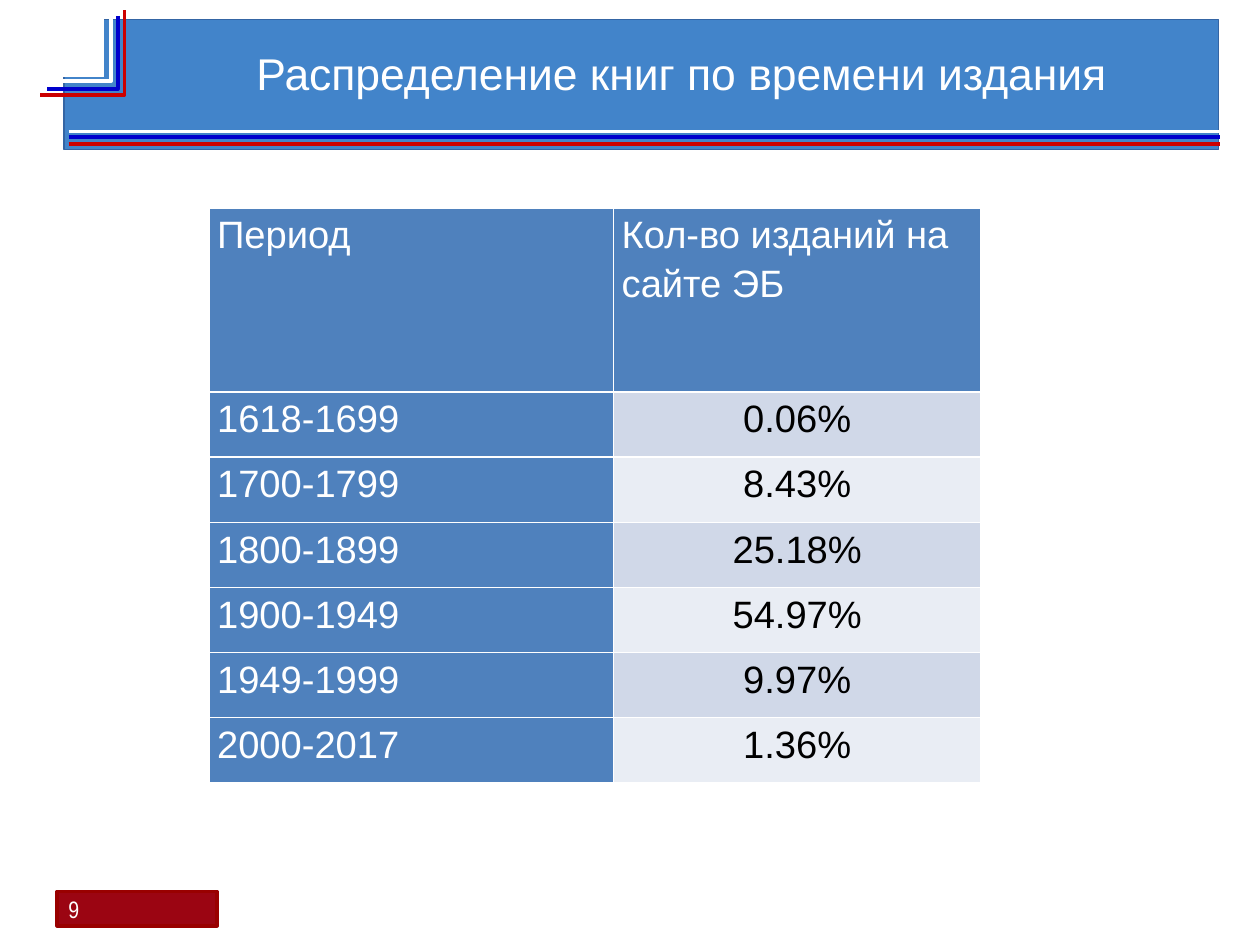
from typing import NamedTuple

from lxml.etree import SubElement
from pptx import Presentation
from pptx.dml.color import RGBColor
from pptx.enum.shapes import MSO_CONNECTOR as Connector, MSO_SHAPE as Shape
from pptx.enum.text import MSO_ANCHOR as Anchor, PP_ALIGN as Align
from pptx.oxml.ns import qn
from pptx.util import Cm, Inches, Pt

WHITE, BLACK = "FFFFFF", "000000"
BLUE, RED = "0000CC", "CC0000"
HEADER_FILL = "4F81BD"
BAND_FILLS = ("D0D8E8", "E9EDF4")
STRIPE_WIDTH = 2.3


class Panel(NamedTuple):
    left: float
    top: float
    width: float
    height: float
    fill: str
    line: str
    line_width: float


class Stripe(NamedTuple):
    y: float
    color: str


class Corner(NamedTuple):
    left: float
    top: float
    right: float
    bottom: float
    color: str


NUMBER_PANEL = Panel(0.5, 7.8, 1.4, 0.3, "9B0512", "990000", STRIPE_WIDTH)
HEADER_PANEL = Panel(0.56, 0.17, 10.1, 1.14, "4284CA", "3465A4", 0.75)
CORNER_PANEL = Panel(0.18, 0.06, 0.73, 0.61, WHITE, WHITE, 0.75)
STRIPES = [Stripe(1.15, WHITE), Stripe(1.2, BLUE), Stripe(1.26, RED)]
INNER_CORNER = Corner(0.35, 0.07, 0.97, 0.71, WHITE)
OUTER_CORNERS = [
    Corner(0.35, 0.09, 1.09, 0.83, RED),
    Corner(0.41, 0.14, 1.03, 0.78, BLUE),
]
COLUMN_WIDTHS = (3.54, 3.21)
HEADER_HEIGHT, ROW_HEIGHT = 1.61, 0.57
PERIODS = [
    ("Период", "Кол-во изданий на сайте ЭБ"),
    ("1618-1699", "0.06%"),
    ("1700-1799", "8.43%"),
    ("1800-1899", "25.18%"),
    ("1900-1949", "54.97%"),
    ("1949-1999", "9.97%"),
    ("2000-2017", "1.36%"),
]


def rgb(color: str) -> RGBColor:
    return RGBColor.from_string(color)


def set_line(shape, color: str, width: float) -> None:
    shape.line.color.rgb = rgb(color)
    shape.line.width = Pt(width)


def write(frame, text: str, *, size: float, font: str = "Arial", color: str = WHITE,
          align: Align = Align.LEFT, spacing: float = 1.0) -> None:
    frame.word_wrap = True
    paragraph = frame.paragraphs[0]
    paragraph.alignment = align
    paragraph.line_spacing = spacing
    run = paragraph.add_run()
    run.text = text
    run.font.name = font
    run.font.size = Pt(size)
    run.font.bold = False
    run.font.color.rgb = rgb(color)


def add_panel(slide, panel: Panel) -> None:
    box = (Inches(value) for value in panel[:4])
    shape = slide.shapes.add_shape(Shape.RECTANGLE, *box)
    shape.shadow.inherit = False
    shape.fill.solid()
    shape.fill.fore_color.rgb = rgb(panel.fill)
    set_line(shape, panel.line, panel.line_width)


def add_stripe(slide, stripe: Stripe) -> None:
    y = Inches(stripe.y)
    line = slide.shapes.add_connector(Connector.STRAIGHT, Inches(0.6), y, Inches(10.67), y)
    set_line(line, stripe.color, STRIPE_WIDTH)
    SubElement(line._element.spPr, qn("a:effectLst"))


def add_corner(slide, corner: Corner) -> None:
    left, top, right, bottom = (Inches(value) for value in corner[:4])
    builder = slide.shapes.build_freeform(right, top)
    builder.add_line_segments([(right, bottom), (left, bottom)], close=False)
    shape = builder.convert_to_shape()
    shape.shadow.inherit = False
    shape.fill.background()
    set_line(shape, corner.color, STRIPE_WIDTH)


def add_cell_borders(cell, color: str, width: float) -> None:
    properties = cell._tc.get_or_add_tcPr()
    for side in ("lnL", "lnR", "lnT", "lnB"):
        border = SubElement(properties, qn(f"a:{side}"), w=str(Pt(width)))
        fill = SubElement(border, qn("a:solidFill"))
        SubElement(fill, qn("a:srgbClr"), val=color)


def add_period_table(slide) -> None:
    heights = [HEADER_HEIGHT] + [ROW_HEIGHT] * (len(PERIODS) - 1)
    table = slide.shapes.add_table(
        len(PERIODS), len(COLUMN_WIDTHS), Inches(1.83), Inches(1.82),
        Inches(sum(COLUMN_WIDTHS)), Inches(sum(heights))).table
    table.horz_banding = False
    for column, width in zip(table.columns, COLUMN_WIDTHS):
        column.width = Inches(width)
    for row, height in zip(table.rows, heights):
        row.height = Inches(height)
    for r, texts in enumerate(PERIODS):
        for c, text in enumerate(texts):
            is_share = r > 0 and c > 0
            cell = table.cell(r, c)
            add_cell_borders(cell, WHITE, 1)
            cell.fill.solid()
            cell.fill.fore_color.rgb = rgb(BAND_FILLS[(r - 1) % 2] if is_share else HEADER_FILL)
            cell.margin_left = cell.margin_right = Inches(0.07)
            cell.margin_top = cell.margin_bottom = 0
            write(cell.text_frame, text, size=24, spacing=1.15,
                  color=BLACK if is_share else WHITE,
                  align=Align.CENTER if is_share else Align.LEFT)


def add_page_number(slide) -> None:
    number = slide.shapes.add_textbox(Inches(0.5), Inches(7.78), Inches(1.34), Inches(0.34))
    number.text_frame.vertical_anchor = Anchor.MIDDLE
    write(number.text_frame, "9", size=15, font="Arial Narrow")


def place_title(slide) -> None:
    """Format the title and bring it in front of the header panel."""
    title = slide.shapes.title
    title.left, title.top = Inches(1.57), Inches(0.35)
    title.width, title.height = Inches(8.78), Inches(0.57)
    title.text_frame.vertical_anchor = Anchor.TOP
    write(title.text_frame, "Распределение книг по времени издания", size=28,
          align=Align.CENTER)
    slide.shapes._spTree.append(title._element)


def main() -> None:
    deck = Presentation()
    deck.slide_width = Cm(28)
    deck.slide_height = Cm(21)
    slide = deck.slides.add_slide(deck.slide_layouts.get_by_name("Title Only"))
    add_panel(slide, NUMBER_PANEL)
    add_page_number(slide)
    add_panel(slide, HEADER_PANEL)
    add_corner(slide, INNER_CORNER)
    for stripe in STRIPES:
        add_stripe(slide, stripe)
    for corner in OUTER_CORNERS:
        add_corner(slide, corner)
    add_panel(slide, CORNER_PANEL)
    add_period_table(slide)
    place_title(slide)
    deck.save("out.pptx")


if __name__ == "__main__":
    main()
